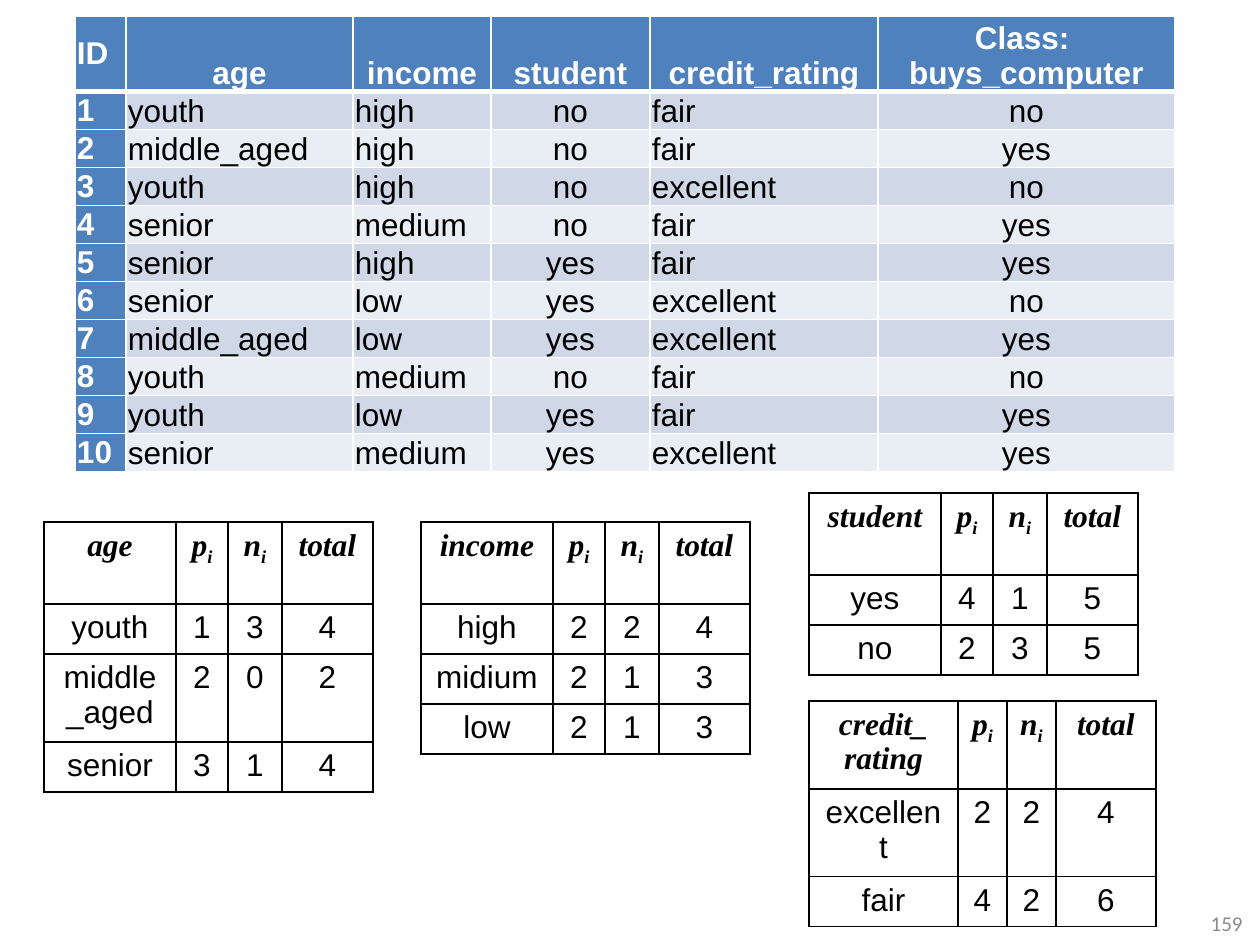
from lxml import etree
from pptx import Presentation
from pptx.dml.color import RGBColor
from pptx.enum.text import MSO_ANCHOR, PP_ALIGN
from pptx.oxml.ns import qn
from pptx.util import Emu, Pt

LEFT, CENTER, RIGHT = PP_ALIGN.LEFT, PP_ALIGN.CENTER, PP_ALIGN.RIGHT
TOP, MIDDLE, BOTTOM = MSO_ANCHOR.TOP, MSO_ANCHOR.MIDDLE, MSO_ANCHOR.BOTTOM
PX_PER_INCH = 126

COLORS = {
    "header": "4F81BD",
    "band_dark": "D0D8E8",
    "band_light": "E9EDF4",
    "white": "FFFFFF",
    "black": "000000",
    "page_number": "898989",
}

RECORD_HEADINGS = ["ID", "age", "income", "student", "credit_rating",
                   "Class: \nbuys_computer"]
RECORD_ALIGNMENTS = [LEFT, LEFT, LEFT, CENTER, LEFT, CENTER]
RECORDS = [
    ["youth", "high", "no", "fair", "no"],
    ["middle_aged", "high", "no", "fair", "yes"],
    ["youth", "high", "no", "excellent", "no"],
    ["senior", "medium", "no", "fair", "yes"],
    ["senior", "high", "yes", "fair", "yes"],
    ["senior", "low", "yes", "excellent", "no"],
    ["middle_aged", "low", "yes", "excellent", "yes"],
    ["youth", "medium", "no", "fair", "no"],
    ["youth", "low", "yes", "fair", "yes"],
    ["senior", "medium", "yes", "excellent", "yes"],
]

COUNT_WIDTHS = [132, 52, 54, 91]
# Attribute, left, top, column widths, row heights, (value, p, n)
COUNTS = [
    ("income", 421, 522, COUNT_WIDTHS, [82, 50, 50, 50],
     [("high", 2, 2), ("midium", 2, 1), ("low", 2, 1)]),
    ("age", 44, 522, COUNT_WIDTHS, [82, 50, 88, 50],
     [("youth", 1, 3), ("middle_aged", 2, 0), ("senior", 3, 1)]),
    ("credit_\nrating", 809, 701, [149, 49, 49, 100], [88, 50, 50],
     [("excellent", 2, 2), ("fair", 4, 2)]),
    ("student", 809, 493, COUNT_WIDTHS, [82, 50, 50],
     [("yes", 4, 1), ("no", 2, 3)]),
]


def px(length):
    return Emu(round(length * 914400 / PX_PER_INCH))


def rgb(name):
    return RGBColor.from_string(COLORS[name])


def write(frame, text, subscript="", size=18, font="Arial", color="black",
          bold=False, italic=False, align=LEFT):
    paragraph = frame.paragraphs[0]
    paragraph.alignment = align
    runs = []
    for number, line in enumerate(text.split("\n")):
        if number:
            paragraph.add_line_break()
        runs.append(paragraph.add_run())
        runs[-1].text = line
    if subscript:
        runs.append(paragraph.add_run())
        runs[-1].text = subscript
        runs[-1].font._element.set("baseline", "-25000")
    for run in runs:
        run.font.size = Pt(size)
        run.font.name = font
        run.font.bold = bold
        run.font.italic = italic
        run.font.color.rgb = rgb(color)


def set_borders(cell, color, **widths):
    properties = cell._tc.get_or_add_tcPr()
    for side, width in widths.items():
        line = etree.SubElement(properties, qn(f"a:ln{side}"), w=str(Pt(width)))
        fill = etree.SubElement(line, qn("a:solidFill"))
        etree.SubElement(fill, qn("a:srgbClr"), val=COLORS[color])


def set_cell(cell, anchor, side_margin, end_margin, fill=None):
    cell.vertical_anchor = anchor
    cell.margin_left = cell.margin_right = px(side_margin)
    cell.margin_top = cell.margin_bottom = px(end_margin)
    if fill:
        cell.fill.solid()
        cell.fill.fore_color.rgb = rgb(fill)
    else:
        cell.fill.background()


def add_grid(slide, left, top, widths, heights):
    table = slide.shapes.add_table(len(heights), len(widths), px(left), px(top),
                                   px(sum(widths)), px(sum(heights))).table
    table.first_row = table.horz_banding = False
    for column, width in zip(table.columns, widths):
        column.width = px(width)
    for row, height in zip(table.rows, heights):
        row.height = px(height)
    return table


def add_records(slide):
    heights = [75] + [38] * len(RECORDS)
    table = add_grid(slide, 75, 16, [51, 227, 138, 159, 228, 297], heights)
    rows = [RECORD_HEADINGS] + [[str(number)] + record
                                for number, record in enumerate(RECORDS, 1)]
    for r, row in enumerate(rows):
        band = "band_dark" if r % 2 else "band_light"
        for c, text in enumerate(row):
            cell = table.cell(r, c)
            heading = r == 0 or c == 0
            if r == 0:
                set_borders(cell, "white", L=1, R=1, T=1, B=3)
            elif r == 1:
                set_borders(cell, "white", L=1, R=1, B=1)
            else:
                set_borders(cell, "white", L=1, R=1, T=1, B=1)
            set_cell(cell, BOTTOM if c else MIDDLE, 2, 0,
                     "header" if heading else band)
            write(cell.text_frame, text, bold=heading,
                  color="white" if heading else "black",
                  align=CENTER if r == 0 and c else RECORD_ALIGNMENTS[c])


def add_counts(slide, attribute, left, top, widths, heights, counts):
    table = add_grid(slide, left, top, widths, heights)
    rows = [[attribute, "p", "n", "total"]]
    rows += [[value, str(p), str(n), str(p + n)] for value, p, n in counts]
    for r, row in enumerate(rows):
        for c, text in enumerate(row):
            cell = table.cell(r, c)
            heading = r == 0
            set_borders(cell, "black", L=1, R=1, T=1, B=1)
            set_cell(cell, TOP, 13, 6)
            write(cell.text_frame, text, align=CENTER,
                  subscript="i" if heading and c in (1, 2) else "",
                  font="Times New Roman" if heading else "Arial",
                  bold=heading, italic=heading)


def add_page_number(slide, number):
    frame = slide.shapes.add_textbox(px(961), px(898), px(294), px(50)).text_frame
    frame.word_wrap = True
    frame.vertical_anchor = MIDDLE
    write(frame, number, size=12, font="Calibri", color="page_number", align=RIGHT)


def main():
    deck = Presentation()
    deck.slide_width, deck.slide_height = px(1260), px(945)
    slide = deck.slides.add_slide(deck.slide_layouts[6])

    add_page_number(slide, "159")
    # Training records
    add_records(slide)
    # Class counts for each attribute
    for counts in COUNTS:
        add_counts(slide, *counts)

    deck.save("out.pptx")


if __name__ == "__main__":
    main()
